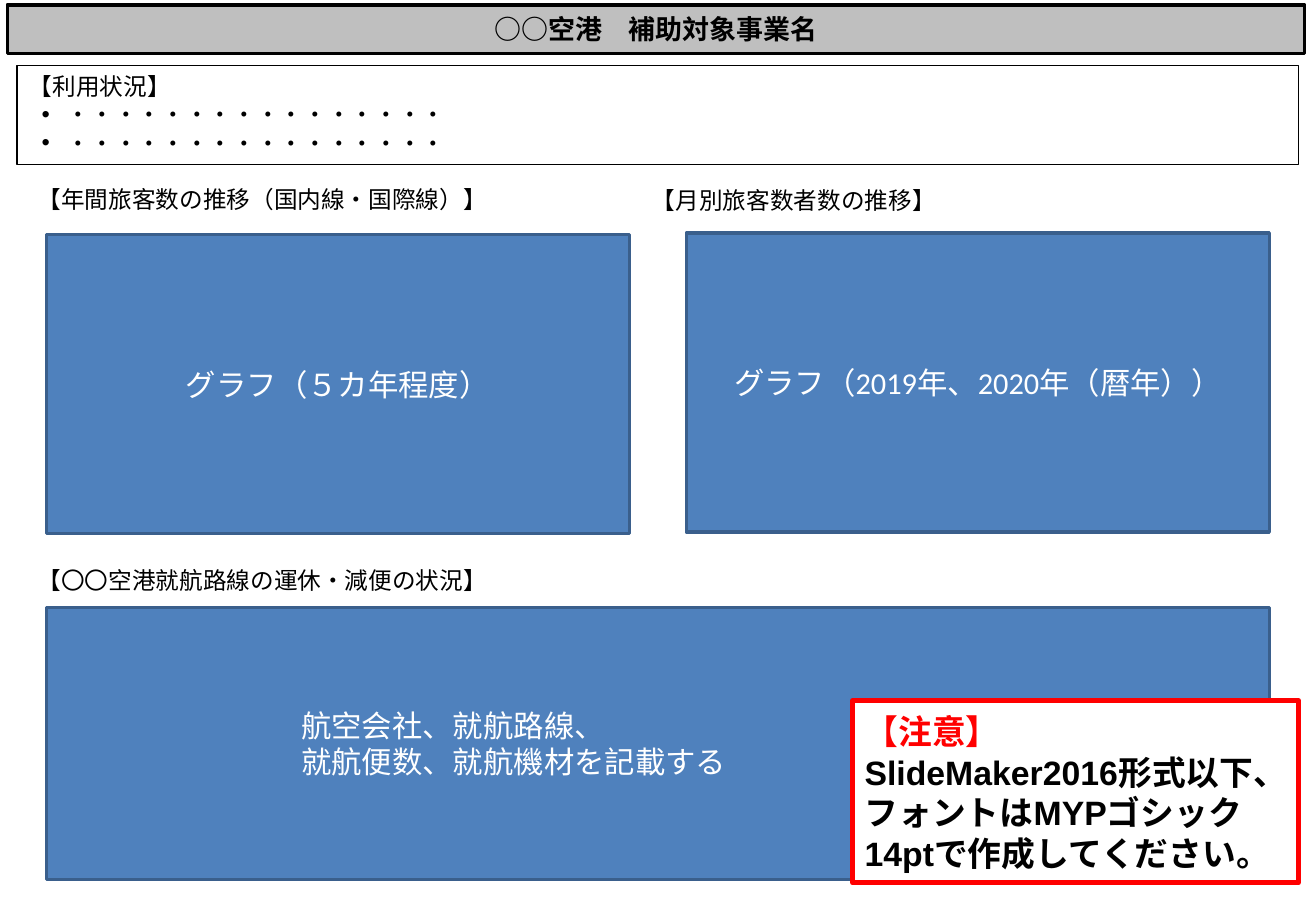
from lxml import etree
from pptx import Presentation
from pptx.dml.color import RGBColor
from pptx.enum import shapes, text
from pptx.oxml import ns
from pptx.util import Pt

BLACK = RGBColor(0, 0, 0)
WHITE = RGBColor(255, 255, 255)
RED = RGBColor(255, 0, 0)
GRAY = RGBColor(0xBF, 0xBF, 0xBF)
BLUE = RGBColor(0x4F, 0x81, 0xBD)
NAVY = RGBColor(0x3A, 0x5F, 0x8C)

SIZE = (780, 540)
LEFT, CHART_W, CHART_H = 27.4, 345.6, 177.1
RIGHT = 406.8

TITLE = "○○空港　補助対象事業名"
DOTS = "・" * 16
USAGE = ["【利用状況】", DOTS, DOTS]
CAPTIONS = [  # text, left, top, width
    ("【年間旅客数の推移（国内線・国際線）】", 15.1, 105.8, 340),
    ("【月別旅客数者数の推移】", 379.4, 106.6, 340),
    ("【〇〇空港就航路線の運休・減便の状況】", 15.1, 331.9, 283),
]
CHARTS = [  # text, left, top
    ("グラフ（５カ年程度）", LEFT, 139),
    ("グラフ（2019年、2020年（暦年））", RIGHT, 138.2),
]
ROUTES = "航空会社、就航路線、\v就航便数、就航機材を記載する"
NOTE = [
    "【注意】",
    "SlideMaker2016形式以下、",
    "フォントはMYPゴシック14ptで作成してください。",
]


def write(shape, lines, size, color, name="Calibri", bold=False,
          align=text.PP_ALIGN.LEFT, anchor=text.MSO_ANCHOR.MIDDLE):
    frame = shape.text_frame
    frame.word_wrap = True
    frame.vertical_anchor = anchor
    frame.text = "\n".join(lines)
    for para in frame.paragraphs:
        para.alignment = align
        font = para.font
        font.name, font.size, font.bold = name, Pt(size), bold
        font.color.rgb = color
    return frame


def add_box(slide, area, fill, line, width):
    box = slide.shapes.add_shape(shapes.MSO_SHAPE.RECTANGLE, *map(Pt, area))
    box.shadow.inherit = False
    if fill is None:
        box.fill.background()
    else:
        box.fill.solid()
        box.fill.fore_color.rgb = fill
    box.line.color.rgb = line
    box.line.width = Pt(width)
    return box


def add_bullet(para):
    props = para._p.get_or_add_pPr()
    props.set("marL", str(Pt(22.5)))
    props.set("indent", str(Pt(-15)))
    mark = etree.Element(ns.qn("a:buFont"), typeface="Arial")
    dot = etree.Element(ns.qn("a:buChar"), char="•")
    props.insert(0, mark)
    mark.addnext(dot)


def main():
    deck = Presentation()
    deck.slide_width, deck.slide_height = map(Pt, SIZE)
    slide = deck.slides.add_slide(deck.slide_layouts[6])
    center, top = text.PP_ALIGN.CENTER, text.MSO_ANCHOR.TOP

    title = add_box(slide, (4.3, 2.9, 769, 28.8), GRAY, BLACK, 2)
    write(title, [TITLE], 16, BLACK, "Arial", True, center)

    usage = add_box(slide, (10.1, 39, 759.6, 58.3), None, BLACK, 0.75)
    frame = write(usage, USAGE, 14, BLACK, anchor=top)
    frame.auto_size = text.MSO_AUTO_SIZE.SHAPE_TO_FIT_TEXT
    for para in frame.paragraphs[1:]:
        add_bullet(para)

    for words, x, y, width in CAPTIONS:
        label = slide.shapes.add_textbox(Pt(x), Pt(y), Pt(width), Pt(24.5))
        frame = write(label, [words], 14, BLACK, anchor=top)
        frame.auto_size = text.MSO_AUTO_SIZE.SHAPE_TO_FIT_TEXT

    for words, x, y in CHARTS:
        chart = add_box(slide, (x, y, CHART_W, CHART_H), BLUE, NAVY, 2)
        write(chart, [words], 18, WHITE, align=center)

    span = RIGHT + CHART_W - LEFT
    routes = add_box(slide, (LEFT, 360, span, 161.3), BLUE, NAVY, 2)
    frame = write(routes, [ROUTES], 18, WHITE)
    frame.paragraphs[0].level = 4

    note = add_box(slide, (505.4, 415.4, 264.2, 108), WHITE, RED, 3)
    frame = write(note, NOTE, 20, BLACK, "Arial", True)
    frame.paragraphs[0].font.color.rgb = RED

    deck.save("out.pptx")


if __name__ == "__main__":
    main()
